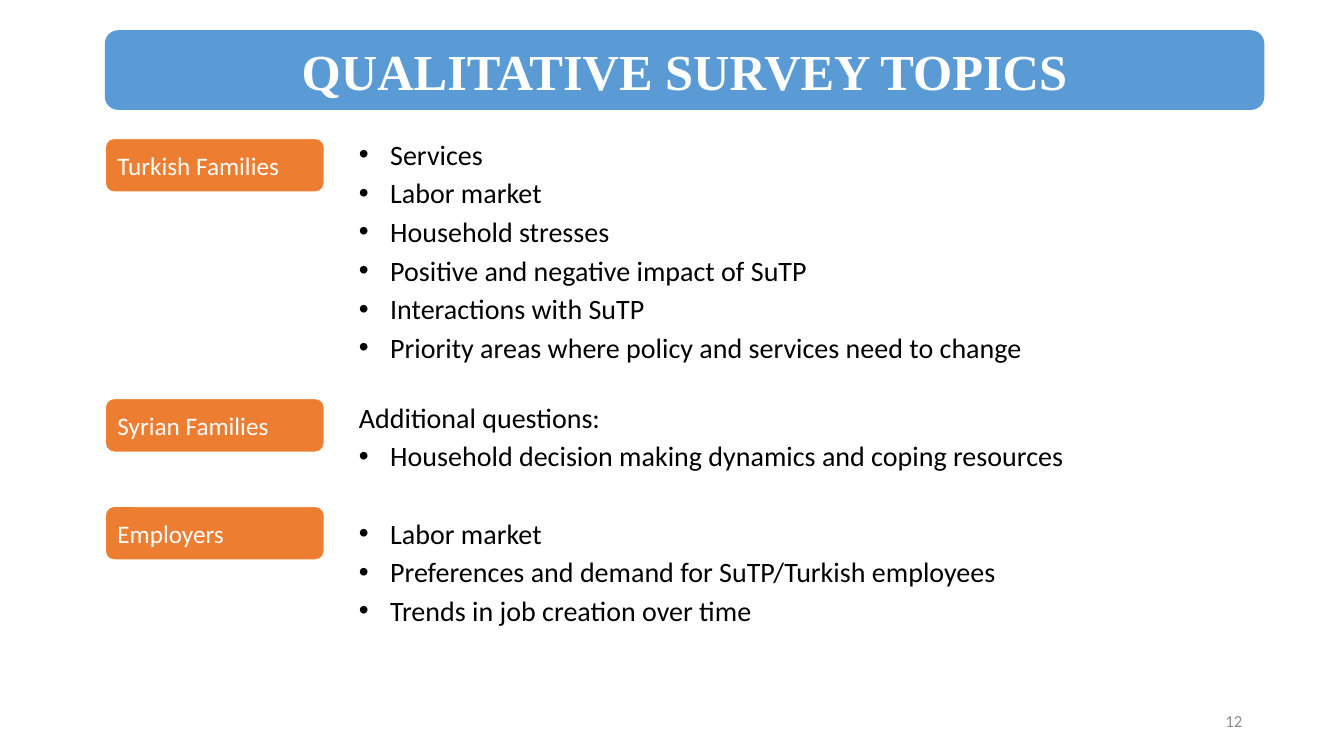
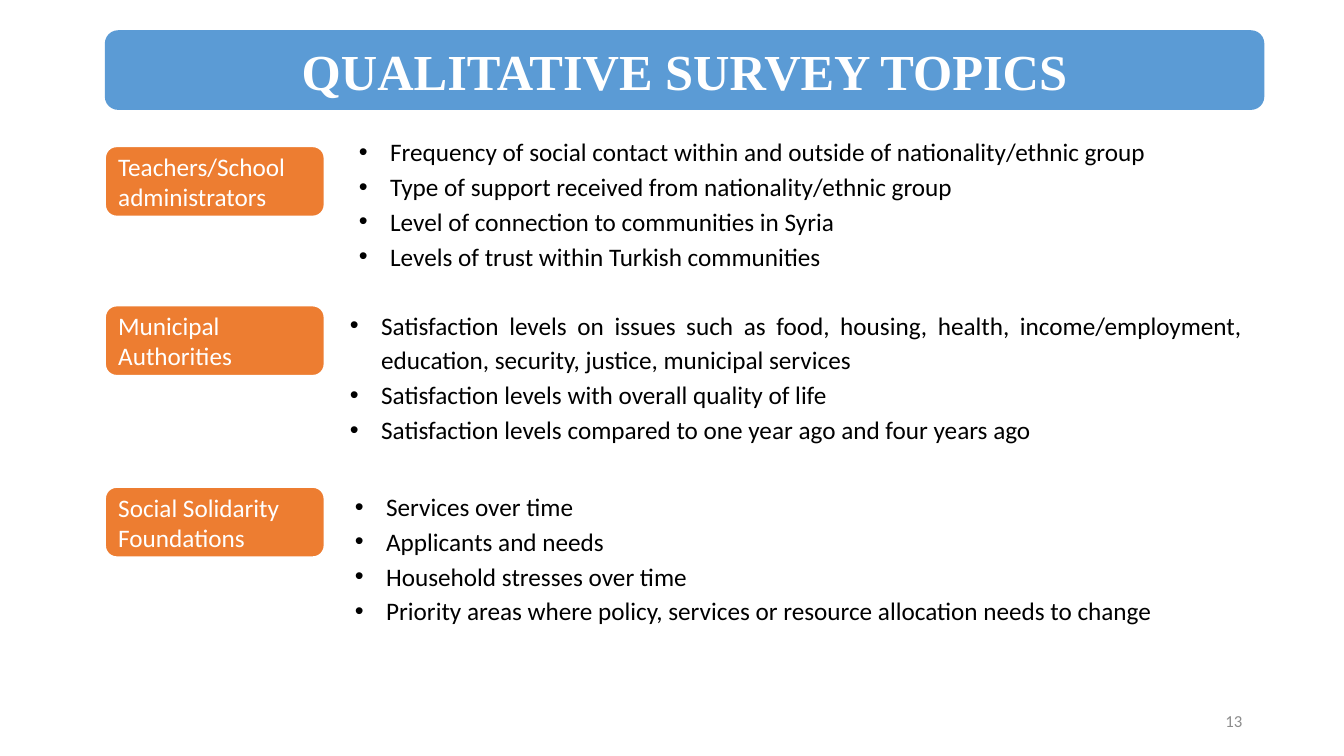
from dataclasses import dataclass

from lxml.etree import SubElement
from pptx import Presentation
from pptx.dml.color import RGBColor
from pptx.enum.shapes import MSO_SHAPE
from pptx.enum.text import MSO_ANCHOR, MSO_AUTO_SIZE, PP_ALIGN
from pptx.oxml.ns import qn
from pptx.util import Emu, Pt

PX = 9144  # 100 px to the inch
WHITE = RGBColor(0xFF, 0xFF, 0xFF)
BLACK = RGBColor(0x00, 0x00, 0x00)
BLUE = RGBColor(0x5B, 0x9B, 0xD5)
ORANGE = RGBColor(0xED, 0x7D, 0x31)
GREY = RGBColor(0x8C, 0x8C, 0x8C)

BODY_FONT = "Calibri"
TITLE_FONT = "Times New Roman"
TITLE = "QUALITATIVE SURVEY TOPICS"
COMPARISON_LAYOUT = 4
LIST_PLACEHOLDERS = (2, 4, 3)
SPARE_PLACEHOLDER = 1
LABEL_LEFT, LABEL_WIDTH = 104, 218
HANG = 31


@dataclass(frozen=True)
class Box:
    left: int
    top: int
    width: int
    height: int


@dataclass(frozen=True)
class Group:
    """One interviewed group and the topics put to it."""
    name: str
    label_top: int
    area: Box
    topics: tuple[str, ...]
    lead: str = ""


@dataclass(frozen=True)
class Page:
    number: int
    label_height: int
    topic_size: int
    groups: tuple[Group, ...]


TITLE_BAND = Box(104, 30, 1150, 79)
NUMBER_AREA = Box(942, 695, 300, 40)

PAGES = (
    Page(12, 54, 20, (
        Group("Turkish Families", 137, Box(346, 126, 908, 242), (
            "Services",
            "Labor market",
            "Household stresses",
            "Positive and negative impact of SuTP",
            "Interactions with SuTP",
            "Priority areas where policy and services need to change",
        )),
        Group("Syrian Families", 395, Box(346, 387, 832, 88), (
            "Household decision making dynamics and coping resources",
        ), lead="Additional questions:"),
        Group("Employers", 502, Box(346, 502, 832, 124), (
            "Labor market",
            "Preferences and demand for SuTP/Turkish employees",
            "Trends in job creation over time",
        )),
    )),
    Page(13, 70, 18, (
        Group("Teachers/School administrators", 145, Box(346, 126, 908, 149), (
            "Frequency of social contact within and outside of nationality/ethnic group",
            "Type of support received from nationality/ethnic group",
            "Level of connection to communities in Syria",
            "Levels of trust within Turkish communities",
        )),
        Group("Municipal Authorities", 303, Box(337, 298, 905, 149), (
            "Satisfaction levels on issues such as food, housing, health, "
            "income/employment, education, security, justice, municipal services",
            "Satisfaction levels with overall quality of life",
            "Satisfaction levels compared to one year ago and four years ago",
        )),
        Group("Social Solidarity Foundations", 483, Box(342, 478, 894, 149), (
            "Services over time",
            "Applicants and needs",
            "Household stresses over time",
            "Priority areas where policy, services or resource allocation needs to change",
        )),
    )),
)


def emu(box: Box) -> tuple[Emu, ...]:
    return tuple(Emu(n * PX) for n in (box.left, box.top, box.width, box.height))


def place(shape, box: Box) -> None:
    shape.left, shape.top, shape.width, shape.height = emu(box)


def style(paragraph, size: int, color: RGBColor, align: PP_ALIGN,
          font: str = BODY_FONT, bold: bool = False) -> None:
    paragraph.alignment = align
    paragraph.font.name = font
    paragraph.font.size = Pt(size)
    paragraph.font.bold = bold
    paragraph.font.color.rgb = color


def add_rounded(slide, box: Box, fill: RGBColor):
    shape = slide.shapes.add_shape(MSO_SHAPE.ROUNDED_RECTANGLE, *emu(box))
    shape.shadow.inherit = False
    shape.fill.solid()
    shape.fill.fore_color.rgb = fill
    shape.line.fill.background()
    return shape


def put_band_on_layout(slide, layout) -> None:
    """Draw the title band and hand it to the layout, behind every title."""
    band = add_rounded(slide, TITLE_BAND, BLUE)
    band._element.nvSpPr.cNvPr.set("id", "90")
    layout.shapes._spTree.append(band._element)


def set_title(slide) -> None:
    title = slide.shapes.title
    place(title, TITLE_BAND)
    frame = title.text_frame
    frame.text = TITLE
    frame.auto_size = MSO_AUTO_SIZE.NONE
    frame.vertical_anchor = MSO_ANCHOR.MIDDLE
    style(frame.paragraphs[0], 36, WHITE, PP_ALIGN.CENTER, TITLE_FONT, bold=True)


def add_label(slide, group: Group, height: int) -> None:
    label = add_rounded(slide, Box(LABEL_LEFT, group.label_top, LABEL_WIDTH, height), ORANGE)
    label.line.color.rgb = WHITE
    label.line.width = Pt(1.5)
    frame = label.text_frame
    frame.word_wrap = True
    frame.vertical_anchor = MSO_ANCHOR.MIDDLE
    frame.text = group.name
    style(frame.paragraphs[0], 18, WHITE, PP_ALIGN.LEFT)


def set_bullet(paragraph, bulleted: bool) -> None:
    hang = HANG * PX if bulleted else 0
    properties = paragraph._p.get_or_add_pPr()
    properties.set("marL", str(hang))
    properties.set("indent", str(-hang))
    # Bullet elements must stand before the default run properties.
    defaults = properties.find(qn("a:defRPr"))
    if bulleted:
        SubElement(properties, qn("a:buFont")).set("typeface", "Arial")
        SubElement(properties, qn("a:buChar")).set("char", "•")
    else:
        SubElement(properties, qn("a:buNone"))
    if defaults is not None:
        properties.append(defaults)


def fill_topics(placeholder, group: Group, size: int) -> None:
    place(placeholder, group.area)
    frame = placeholder.text_frame
    lines = ((group.lead,) if group.lead else ()) + group.topics
    frame.text = "\n".join(lines)
    frame.word_wrap = True
    frame.auto_size = MSO_AUTO_SIZE.NONE
    frame.vertical_anchor = MSO_ANCHOR.TOP
    for line, paragraph in zip(lines, frame.paragraphs):
        style(paragraph, size, BLACK, PP_ALIGN.JUSTIFY)
        paragraph.line_spacing = 1.15
        paragraph.space_before = paragraph.space_after = Pt(0)
        set_bullet(paragraph, line != group.lead)


def add_number(slide, number: int) -> None:
    frame = slide.shapes.add_textbox(*emu(NUMBER_AREA)).text_frame
    frame.word_wrap = True
    frame.vertical_anchor = MSO_ANCHOR.MIDDLE
    frame.text = str(number)
    style(frame.paragraphs[0], 12, GREY, PP_ALIGN.RIGHT)


def build_page(slide, page: Page) -> None:
    set_title(slide)
    bodies = {p.placeholder_format.idx: p for p in slide.placeholders}
    spare = bodies[SPARE_PLACEHOLDER]._element
    spare.getparent().remove(spare)
    for idx, group in zip(LIST_PLACEHOLDERS, page.groups):
        fill_topics(bodies[idx], group, page.topic_size)
        add_label(slide, group, page.label_height)
    add_number(slide, page.number)


def main() -> None:
    deck = Presentation()
    deck.slide_width, deck.slide_height = Emu(1333 * PX), Emu(750 * PX)
    layout = deck.slide_layouts[COMPARISON_LAYOUT]
    slides = [deck.slides.add_slide(layout) for _ in PAGES]
    put_band_on_layout(slides[0], layout)
    for slide, page in zip(slides, PAGES):
        build_page(slide, page)
    deck.save("out.pptx")


if __name__ == "__main__":
    main()
